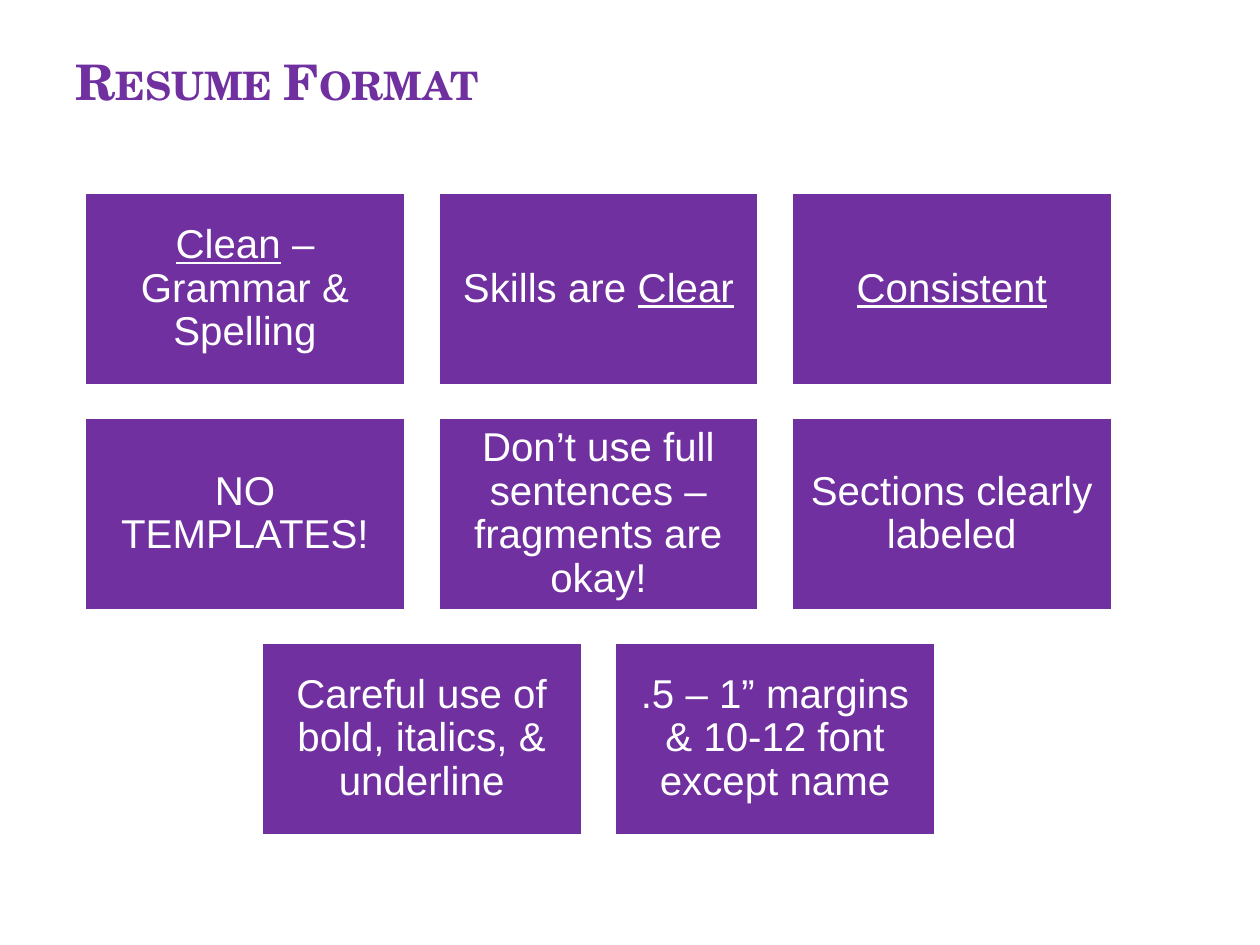
from dataclasses import dataclass

from pptx import Presentation
from pptx.dml.color import RGBColor
from pptx.enum import shapes, text
from pptx.util import Inches, Pt


@dataclass(frozen=True)
class Theme:
    purple: RGBColor = RGBColor(0x70, 0x30, 0xA0)
    white: RGBColor = RGBColor(0xFF, 0xFF, 0xFF)
    title_font: str = "TeX Gyre Schola"
    body_font: str = "Arial"
    title_size: int = 28
    body_size: int = 23


THEME = Theme()

# Grid of boxes: each row is centred on CENTER_X
BOX_W, BOX_H = 2.55, 1.53
GAP = BOX_W / 10
CENTER_X, TOP = 4.75, 1.53

# Each box is a list of (text, underlined) runs
ROWS = [
    [
        [("Clean", True), (" – Grammar & Spelling", False)],
        [("Skills are ", False), ("Clear", True)],
        [("Consistent", True)],
    ],
    [
        [("NO TEMPLATES!", False)],
        [("Don’t use full sentences – fragments are okay!", False)],
        [("Sections clearly labeled", False)],
    ],
    [
        [("Careful use of bold, italics, & underline", False)],
        [(".5 – 1” margins & 10-12 font except name", False)],
    ],
]


def style_font(font, name, size, color):
    font.name = name
    font.size = Pt(size)
    font.color.rgb = color


def add_title(s, title):
    sp = s.shapes.title
    sp.left, sp.top = Inches(0.5), Inches(0)
    sp.width, sp.height = Inches(7.07), Inches(0.93)
    tf = sp.text_frame
    tf.vertical_anchor = text.MSO_ANCHOR.BOTTOM
    p = tf.paragraphs[0]
    p.alignment = text.PP_ALIGN.LEFT
    style_font(p.font, THEME.title_font, THEME.title_size, THEME.purple)
    p.font.bold = True
    r = p.add_run()
    r.text = title
    r.font._element.set("cap", "small")


def add_box(group, left, top, runs):
    sp = group.shapes.add_shape(
        shapes.MSO_SHAPE.RECTANGLE,
        Inches(left), Inches(top), Inches(BOX_W), Inches(BOX_H),
    )
    sp.shadow.inherit = False
    sp.fill.solid()
    sp.fill.fore_color.rgb = THEME.purple
    sp.line.color.rgb = THEME.white
    sp.line.width = Pt(2)

    tf = sp.text_frame
    tf.word_wrap = True
    tf.vertical_anchor = text.MSO_ANCHOR.MIDDLE
    tf.margin_left = tf.margin_right = Inches(0.1)
    tf.margin_top = tf.margin_bottom = Inches(0.1)
    p = tf.paragraphs[0]
    p.alignment = text.PP_ALIGN.CENTER
    p.line_spacing = 0.9
    style_font(p.font, THEME.body_font, THEME.body_size, THEME.white)
    for content, underlined in runs:
        r = p.add_run()
        r.text = content
        if underlined:
            r.font.underline = True


def add_box_grid(s, rows):
    group = s.shapes.add_group_shape()
    for i, row in enumerate(rows):
        row_w = len(row) * (BOX_W + GAP) - GAP
        for j, runs in enumerate(row):
            left = CENTER_X - row_w / 2 + j * (BOX_W + GAP)
            add_box(group, left, TOP + i * (BOX_H + GAP), runs)


def main():
    prs = Presentation()
    prs.slide_width, prs.slide_height = Inches(10), Inches(7.5)
    s = prs.slides.add_slide(prs.slide_layouts[5])  # title only

    add_title(s, "Resume Format")
    add_box_grid(s, ROWS)

    prs.save("out.pptx")


if __name__ == "__main__":
    main()
